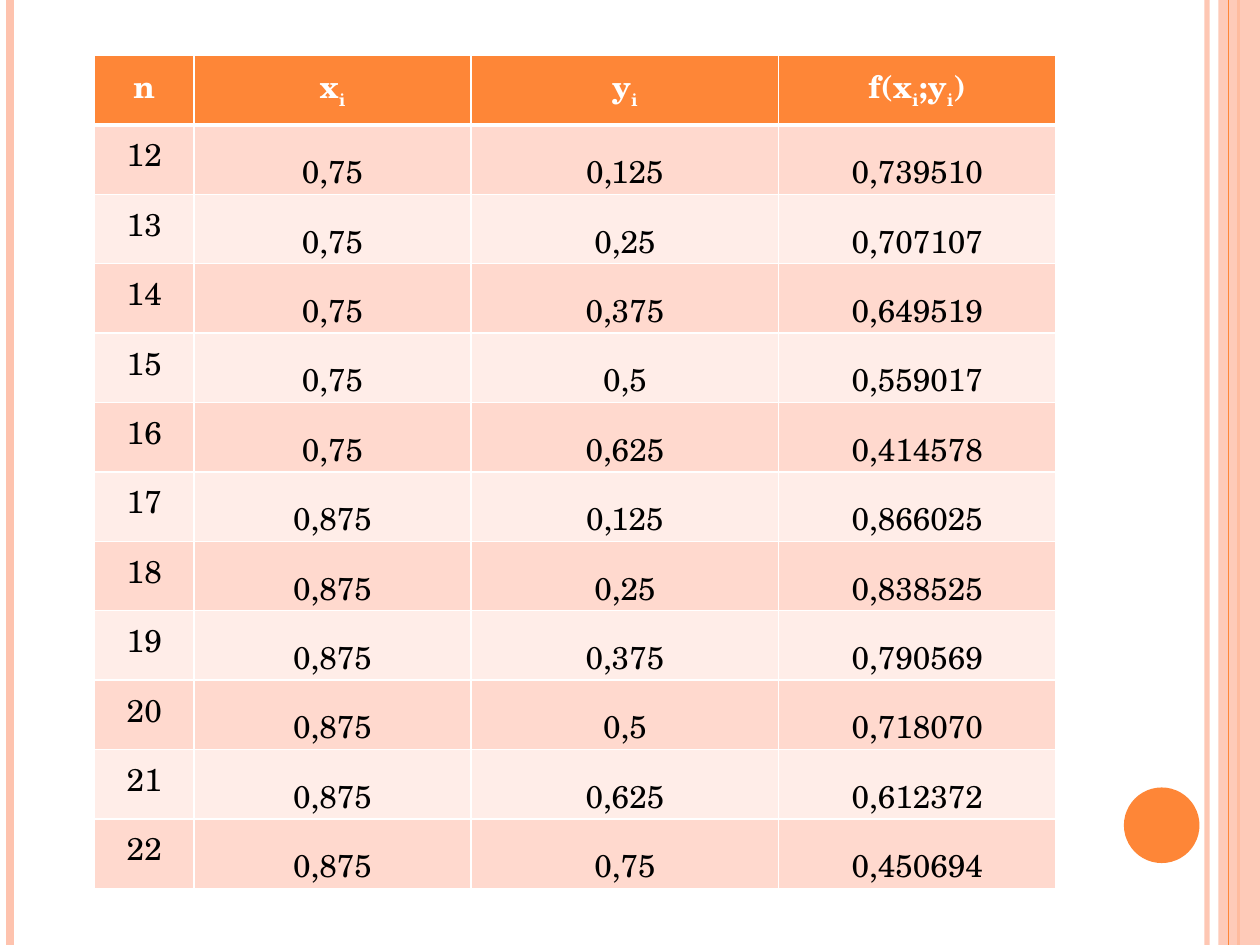
from dataclasses import dataclass

from lxml import etree
from pptx import Presentation
from pptx import util as u
from pptx.dml.color import RGBColor
from pptx.enum import shapes, text
from pptx.oxml import ns


@dataclass(frozen=True)
class Theme:
    font: str = "TeX Gyre Schola"
    size: int = 18
    accent: str = "FE8637"
    pale: str = "FEC3AE"
    white: str = "FFFFFF"
    black: str = "000000"
    bands: tuple = ("FFD9CE", "FFEDE8")
    border: int = 1
    header_border: int = 3


THEME = Theme()
HEADERS = (
    ("n",),
    ("x", "i"),
    ("y", "i"),
    ("f(x", "i", ";y", "i", ")"),
)
FIRST_NUMBER = 12
VALUES = (
    ("0,75", "0,125", "0,739510"),
    ("0,75", "0,25", "0,707107"),
    ("0,75", "0,375", "0,649519"),
    ("0,75", "0,5", "0,559017"),
    ("0,75", "0,625", "0,414578"),
    ("0,875", "0,125", "0,866025"),
    ("0,875", "0,25", "0,838525"),
    ("0,875", "0,375", "0,790569"),
    ("0,875", "0,5", "0,718070"),
    ("0,875", "0,625", "0,612372"),
    ("0,875", "0,75", "0,450694"),
)
COLUMN_WIDTHS = (0.79, 2.2, 2.44, 2.2)


def write_text(paragraph, content, *, color, bold=False, subscript=False):
    run = paragraph.add_run()
    run.text = content
    run.font.name = THEME.font
    run.font.size = u.Pt(THEME.size)
    run.font.bold = bold
    run.font.color.rgb = RGBColor.from_string(color)
    if subscript:
        run._r.get_or_add_rPr().set("baseline", "-25000")


def set_opacity(shape, percent):
    for color in shape._element.spPr.iter(ns.qn("a:srgbClr")):
        etree.SubElement(color, ns.qn("a:alpha"), val=str(percent * 1000))


class SlideBuilder:
    """Draws styled elements on the current slide."""

    def __init__(self, slide, theme):
        self.slide = slide
        self.theme = theme

    def vertical_line(self, x, color, width, opacity=100):
        line = self.slide.shapes.add_connector(
            shapes.MSO_CONNECTOR.STRAIGHT,
            u.Inches(x), 0, u.Inches(x), u.Inches(7.5),
        )
        line.line.color.rgb = RGBColor.from_string(color)
        line.line.width = u.Pt(width)
        etree.SubElement(line._element.spPr, ns.qn("a:effectLst"))
        if opacity < 100:
            set_opacity(line, opacity)

    def solid_shape(self, kind, left, top, width, height, color, opacity=100):
        shape = self.slide.shapes.add_shape(
            kind, *(u.Inches(length) for length in (left, top, width, height))
        )
        shape.shadow.inherit = False
        shape.fill.solid()
        shape.fill.fore_color.rgb = RGBColor.from_string(color)
        shape.line.fill.background()
        if opacity < 100:
            set_opacity(shape, opacity)

    def cell(self, cell, parts, fill, color, bold=False, top=1, bottom=1):
        properties = cell._tc.get_or_add_tcPr()
        edges = {"L": self.theme.border, "R": self.theme.border, "T": top, "B": bottom}
        for edge, width in edges.items():
            line = etree.SubElement(
                properties, ns.qn(f"a:ln{edge}"), w=str(u.Pt(width))
            )
            solid = etree.SubElement(line, ns.qn("a:solidFill"))
            etree.SubElement(solid, ns.qn("a:srgbClr"), val=self.theme.white)
        cell.fill.solid()
        cell.fill.fore_color.rgb = RGBColor.from_string(fill)
        paragraph = cell.text_frame.paragraphs[0]
        paragraph.alignment = text.PP_ALIGN.CENTER
        for index, part in enumerate(parts):
            write_text(
                paragraph, part, color=color, bold=bold, subscript=index % 2 == 1
            )

    def value_table(self, left, top, width, height):
        theme = self.theme
        row_count = len(VALUES) + 1
        table = self.slide.shapes.add_table(
            row_count, len(HEADERS),
            *(u.Inches(length) for length in (left, top, width, height)),
        ).table
        for column, column_width in zip(table.columns, COLUMN_WIDTHS):
            column.width = u.Inches(column_width)
        for row in table.rows:
            row.height = u.Inches(height / row_count)

        for column, parts in enumerate(HEADERS):
            self.cell(
                table.cell(0, column), parts, theme.accent, theme.white,
                bold=True, bottom=theme.header_border,
            )
        for row, values in enumerate(VALUES, start=1):
            fill = theme.bands[(row - 1) % 2]
            edge = theme.header_border if row == 1 else theme.border
            number = str(FIRST_NUMBER + row - 1)
            for column, value in enumerate((number, *values)):
                cell = table.cell(row, column)
                self.cell(cell, (value,), fill, theme.black, top=edge)
                if column > 0:
                    cell.vertical_anchor = text.MSO_ANCHOR.BOTTOM
                    cell.margin_left = cell.margin_right = u.Inches(0.01)
                    cell.margin_top = u.Inches(0.01)
                    cell.margin_bottom = 0


def main():
    presentation = Presentation()
    presentation.slide_width = u.Inches(10)
    presentation.slide_height = u.Inches(7.5)
    slide = presentation.slides.add_slide(presentation.slide_layouts[6])
    builder = SlideBuilder(slide, THEME)

    builder.vertical_line(9.58, THEME.pale, 3, opacity=93)
    builder.vertical_line(0.08, THEME.pale, 4.5)
    builder.vertical_line(9.83, THEME.accent, 1.5)
    builder.solid_shape(
        shapes.MSO_SHAPE.RECTANGLE, 9.67, 0, 0.33, 7.5, THEME.pale, opacity=87
    )
    builder.vertical_line(9.75, THEME.accent, 0.75)
    builder.solid_shape(shapes.MSO_SHAPE.OVAL, 8.92, 6.25, 0.6, 0.6, THEME.accent)
    builder.value_table(0.75, 0.44, sum(COLUMN_WIDTHS), 6.61)

    presentation.save("out.pptx")


if __name__ == "__main__":
    main()
